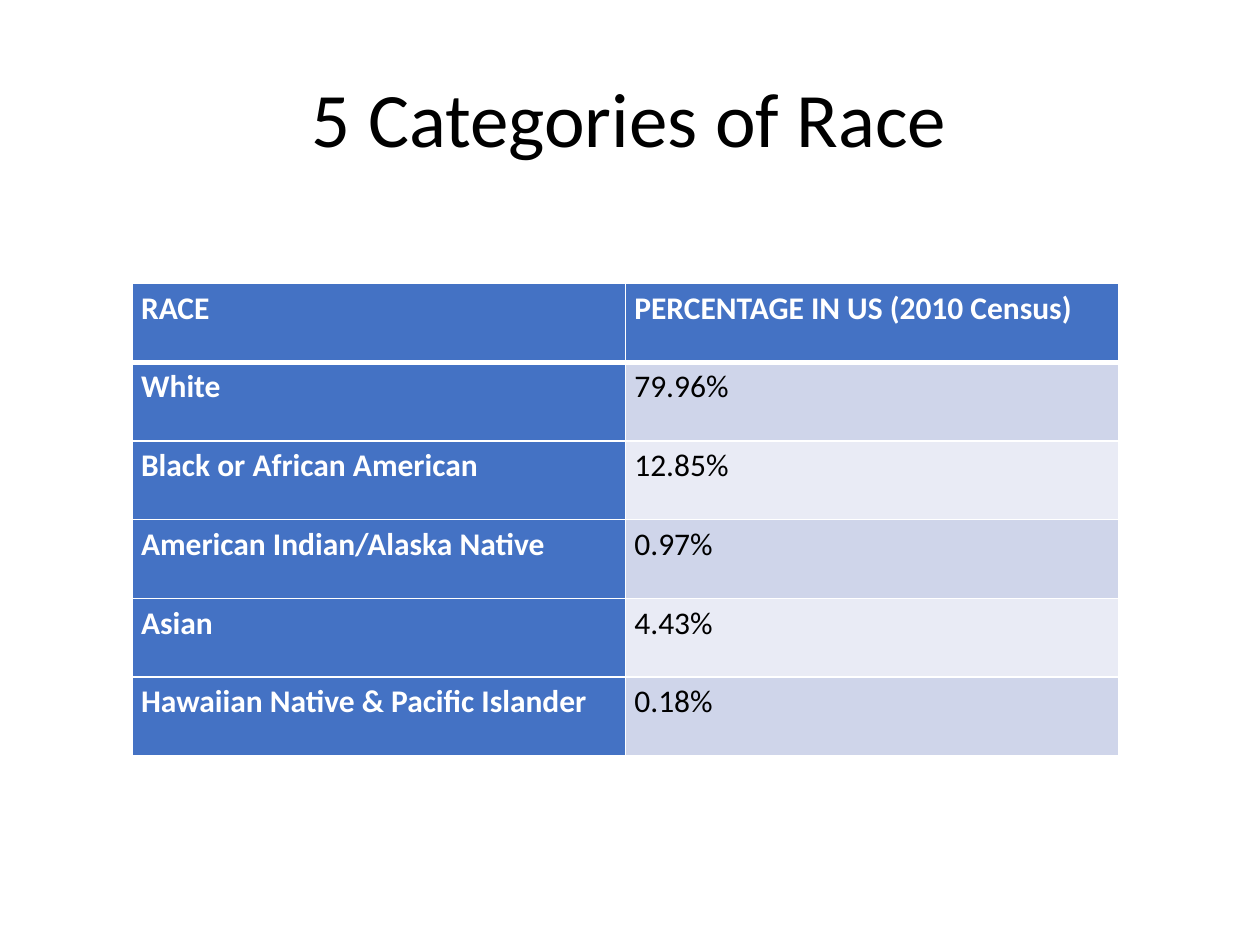
"""Build a slide with a table of the five census race categories."""
import pptx
import pptx.dml.color
import pptx.enum.text
import pptx.oxml
import pptx.oxml.ns
import pptx.util

Inches = pptx.util.Inches
Pt = pptx.util.Pt
RGBColor = pptx.dml.color.RGBColor

TITLE = "5 Categories of Race"
ROWS = [
    ("RACE", "PERCENTAGE IN US (2010 Census)"),
    ("White", "79.96%"),
    ("Black or African American", "12.85%"),
    ("American Indian/Alaska Native", "0.97%"),
    ("Asian", "4.43%"),
    ("Hawaiian Native & Pacific Islander", "0.18%"),
]

BLACK = RGBColor(0x00, 0x00, 0x00)
WHITE = RGBColor(0xFF, 0xFF, 0xFF)
BLUE = RGBColor(0x44, 0x72, 0xC4)
BANDS = (RGBColor(0xE9, 0xEB, 0xF5), RGBColor(0xCF, 0xD5, 0xEA))

TITLE_BOX = {"left": 1.08, "top": 0.3, "width": 7.83, "height": 1.25}
TABLE_BOX = (1.05, 2.25, 7.83, 3.75)
MARGINS = {"margin_left": 0.07, "margin_top": 0, "margin_right": 0.07, "margin_bottom": 0}


def set_all(obj, values):
    for name, value in values.items():
        setattr(obj, name, value)


def write(p, text, size, color, bold=False):
    p.text = text
    font = p.runs[0].font
    set_all(font, {"name": "Calibri", "size": Pt(size), "bold": bold})
    font.color.rgb = color


def add_border(cell, side, width):
    cell._tc.get_or_add_tcPr().append(pptx.oxml.parse_xml(
        f'<a:{side} {pptx.oxml.ns.nsdecls("a")} w="{Pt(width)}">'
        f'<a:solidFill><a:srgbClr val="{WHITE}"/></a:solidFill></a:{side}>'))


def add_title(s):
    sp = s.shapes.title
    set_all(sp, {name: Inches(v) for name, v in TITLE_BOX.items()})
    tf = sp.text_frame
    tf.vertical_anchor = pptx.enum.text.MSO_ANCHOR.MIDDLE
    p = tf.paragraphs[0]
    write(p, TITLE, 44, BLACK)
    p.alignment = pptx.enum.text.PP_ALIGN.CENTER


def add_race_table(s):
    box = [Inches(v) for v in TABLE_BOX]
    table = s.shapes.add_table(len(ROWS), len(ROWS[0]), *box).table
    table.first_col = True
    for i, row in enumerate(ROWS):
        for j, text in enumerate(row):
            cell = table.cell(i, j)
            heading = i == 0 or j == 0
            set_all(cell, {name: Inches(v) for name, v in MARGINS.items()})
            widths = {"lnL": 1, "lnR": 1, "lnT": 3 if i == 1 else 1, "lnB": 3 if i == 0 else 1}
            for side, width in widths.items():
                add_border(cell, side, width)
            cell.fill.solid()
            cell.fill.fore_color.rgb = BLUE if heading else BANDS[i % 2]
            p = cell.text_frame.paragraphs[0]
            write(p, text, 18, WHITE if heading else BLACK, heading)
            p.line_spacing = 1.15


def main():
    prs = pptx.Presentation()
    set_all(prs, {"slide_width": Inches(10), "slide_height": Inches(7.5)})
    s = prs.slides.add_slide(prs.slide_layouts[5])
    add_title(s)
    add_race_table(s)
    prs.save("out.pptx")


if __name__ == "__main__":
    main()
